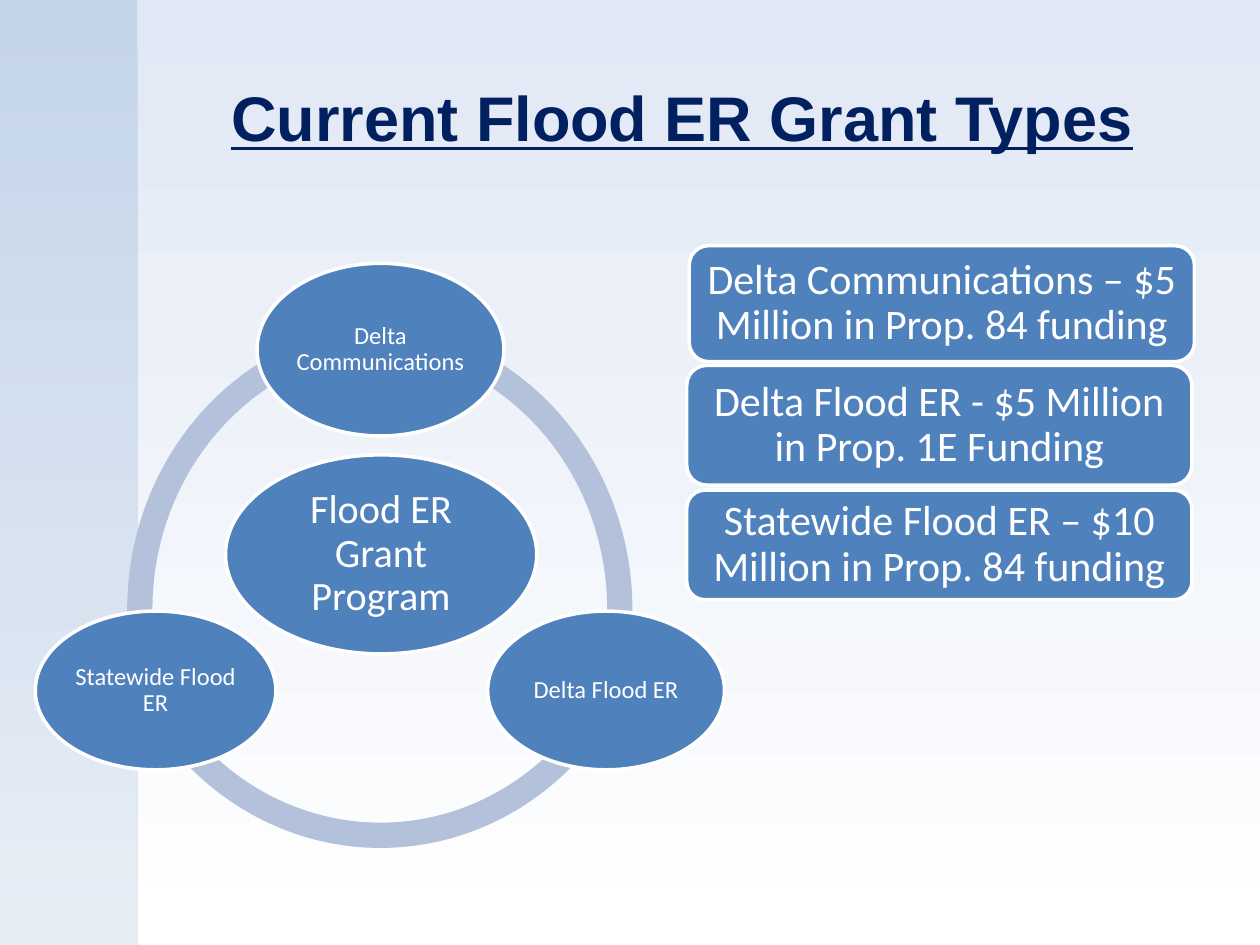
from lxml.etree import SubElement
from pptx import Presentation
from pptx.dml.color import RGBColor
from pptx.enum.shapes import MSO_SHAPE as Shape
from pptx.enum.text import MSO_ANCHOR as Anchor, PP_ALIGN as Align
from pptx.oxml.ns import qn
from pptx.util import Inches, Pt

COLORS = {
    "navy": "002060", "blue": "4F81BD", "ring": "B3C1DB", "white": "FFFFFF",
    "sky": "E1E8F5", "band_top": "B9CDE5", "band_bottom": "DCE6F2",
}
TITLE = "Current Flood ER Grant Types"
ARC_SIZE = (4.36, 4.57)
ARCS = [
    (1.01, 2.55, 97.2, 159.07),
    (0.84, 2.16, 18, 90),
    (0.66, 2.55, 164.93, 10.8),
]
ELLIPSES = [
    ("Flood ER Grant Program", 23, (1.79, 3.61, 2.47, 1.58)),
    ("Delta Communications", 14, (2.04, 2.09, 1.96, 1.37)),
    ("Delta Flood ER", 14, (3.87, 4.85, 1.88, 1.26)),
    ("Statewide Flood ER", 14, (0.28, 4.85, 1.91, 1.26)),
]
GRANTS = [
    ("Delta Communications – $5 Million in Prop. 84 funding", (5.47, 1.95, 4.01, 0.92)),
    ("Delta Flood ER - $5 Million in Prop. 1E Funding", (5.45, 2.9, 4.01, 0.95)),
    ("Statewide Flood ER – $10 Million in Prop. 84 funding", (5.45, 3.89, 4.01, 0.87)),
]


def rgb(name):
    return RGBColor.from_string(COLORS[name])


def fill_gradient(fill, *names):
    fill.gradient()
    fill.gradient_angle = 270
    for position, (stop, name) in enumerate(zip(fill.gradient_stops, names)):
        stop.position = position
        stop.color.rgb = rgb(name)


def add_shape(slide, kind, box, color=None):
    sp = slide.shapes.add_shape(kind, *map(Inches, box))
    sp.shadow.inherit = False
    sp.line.fill.background()
    if color:
        sp.fill.solid()
        sp.fill.fore_color.rgb = rgb(color)
    return sp


def set_text(sp, text, size, color, font):
    tf = sp.text_frame
    tf.word_wrap = True
    tf.vertical_anchor = Anchor.MIDDLE
    p = tf.paragraphs[0]
    p.text = text
    p.alignment = Align.CENTER
    p.font.size = Pt(size)
    p.font.name = font
    p.font.color.rgb = rgb(color)
    return p


def add_node(slide, kind, box, text, size, inset_x, inset_y):
    sp = add_shape(slide, kind, box, "blue")
    sp.line.color.rgb = rgb("white")
    sp.line.width = Pt(2)
    tf = sp.text_frame
    tf.margin_left = tf.margin_right = Inches(inset_x)
    tf.margin_top = tf.margin_bottom = Inches(inset_y)
    set_text(sp, text, size, "white", "Calibri").line_spacing = 0.9


def main():
    prs = Presentation()
    prs.slide_width, prs.slide_height = Inches(10), Inches(7.5)
    s = prs.slides.add_slide(prs.slide_layouts[6])
    fill_gradient(s.background.fill, "sky", "white")

    band = add_shape(s, Shape.RECTANGLE, (0, 0, 1.09, 7.5))
    fill_gradient(band.fill, "band_top", "band_bottom")
    for color in band._element.spPr.iter(qn("a:srgbClr")):
        SubElement(color, qn("a:alpha"), val="70000")

    title = s.shapes.add_textbox(*map(Inches, (1.08, 0.3, 8.67, 1.25)))
    p = set_text(title, TITLE, 36, "navy", "Arial")
    p.font.bold = p.font.underline = True

    for left, top, start, end in ARCS:
        arc = add_shape(s, Shape.BLOCK_ARC, (left, top, *ARC_SIZE), "ring")
        for i, value in enumerate((start, end, 0.046)):
            arc.adjustments[i] = value

    for text, size, box in ELLIPSES:
        add_node(s, Shape.OVAL, box, text, size, 0.01, 0.02)
    for text, box in GRANTS:
        add_node(s, Shape.ROUNDED_RECTANGLE, box, text, 24, 0.07, 0.1)

    prs.save("out.pptx")


if __name__ == "__main__":
    main()
